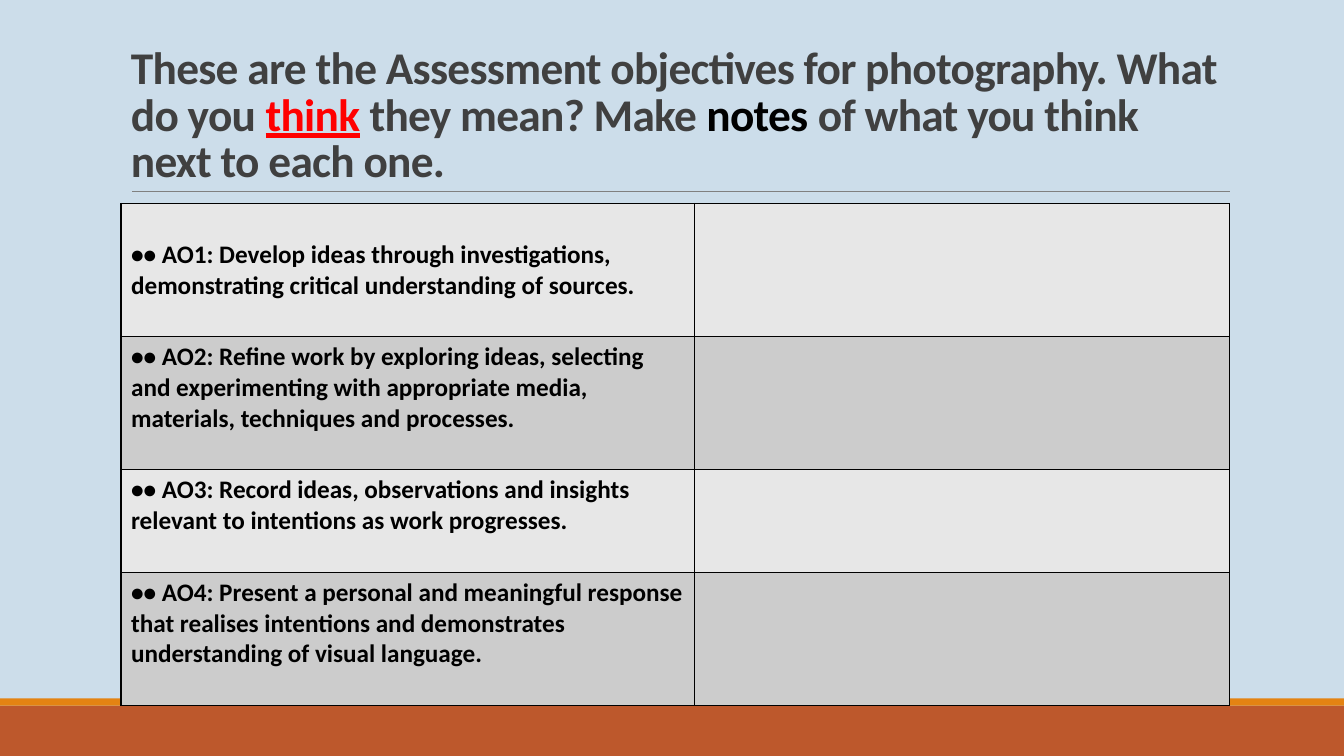
from lxml import etree
from pptx import Presentation
from pptx import util as u
from pptx.dml.color import RGBColor
from pptx.enum import shapes, text
from pptx.oxml.ns import qn

FONT = "Calibri"
SLIDE_W, SLIDE_H = u.Cm(33.87), u.Cm(19.05)
QUESTION = [
    ("These are the Assessment objectives for photography. What do you ", "404040", False),
    ("think", "FF0000", True),
    (" they mean? Make", "404040", False),
    (" notes ", "000000", False),
    ("of what you think next to each one.", "404040", False),
]
OBJECTIVES = [
    ("•• AO1: Develop ideas through investigations, demonstrating critical "
     "understanding of sources.", 3.35),
    ("•• AO2: Refine work by exploring ideas, selecting and experimenting with "
     "appropriate media, materials, techniques and processes.", 3.35),
    ("•• AO3: Record ideas, observations and insights relevant to intentions "
     "as work progresses.", 2.59),
    ("•• AO4: Present a personal and meaningful response that realises intentions "
     "and demonstrates understanding of visual language.", 3.35),
]
ROW_FILLS = ["E7E7E7", "CCCCCC"]


def color(hex_string):
    """Return the colour for a hex string."""
    return RGBColor.from_string(hex_string)


def style_run(run, size, hex_string, underline=False):
    """Give a run its bold type, size and colour."""
    run.font.name = FONT
    run.font.size = u.Pt(size)
    run.font.bold = True
    run.font.underline = underline
    run.font.color.rgb = color(hex_string)


def add_band(slide, left, top, width, height, fill):
    """Draw one plain coloured band."""
    band = slide.shapes.add_shape(shapes.MSO_SHAPE.RECTANGLE, left, top, width, height)
    band.shadow.inherit = False
    band.fill.solid()
    band.fill.fore_color.rgb = color(fill)
    band.line.fill.background()


def add_footer(slide, left, top, width, height):
    """Draw the footer with its thin accent along the top."""
    accent = u.Cm(0.18)
    add_band(slide, left, top + accent, width, height - accent, "BD582C")
    add_band(slide, left, top, width, accent, "E48312")


def add_question(slide, left, top, width, height):
    """Write the question with a rule along its lower edge."""
    rule_left, rule_y = left + u.Cm(0.28), top + height
    rule = slide.shapes.add_connector(
        shapes.MSO_CONNECTOR.STRAIGHT, rule_left, rule_y, left + width, rule_y)
    rule.line.color.rgb = color("808080")
    rule.line.width = u.Pt(0.5)
    etree.SubElement(rule._element.spPr, qn("a:effectLst"))

    frame = slide.shapes.add_textbox(left, top, width, height).text_frame
    frame.word_wrap = True
    frame.vertical_anchor = text.MSO_ANCHOR.BOTTOM
    question = frame.paragraphs[0]
    question.line_spacing = 0.85
    for words, hex_string, underline in QUESTION:
        run = question.add_run()
        run.text = words
        style_run(run, 32.4, hex_string, underline)
        run._r.get_or_add_rPr().set("spc", "-50")


def border_cell(cell):
    """Draw a thin black border on every side of a cell."""
    properties = cell._tc.get_or_add_tcPr()
    for position, side in enumerate(("a:lnL", "a:lnR", "a:lnT", "a:lnB")):
        border = etree.Element(qn(side), w=str(u.Pt(1)))
        fill = etree.SubElement(border, qn("a:solidFill"))
        etree.SubElement(fill, qn("a:srgbClr"), val="000000")
        properties.insert(position, border)


def add_objectives(slide, left, top, width, height):
    """Lay out the objectives beside empty cells for notes."""
    grid = slide.shapes.add_table(len(OBJECTIVES), 2, left, top, width, height).table
    grid.columns[0].width = u.Cm(14.45)
    grid.columns[1].width = width - u.Cm(14.45)
    for index, (objective, row_height) in enumerate(OBJECTIVES):
        grid.rows[index].height = u.Cm(row_height)
        for cell in grid.rows[index].cells:
            cell.fill.solid()
            cell.fill.fore_color.rgb = color(ROW_FILLS[index % 2])
            border_cell(cell)
        objective_cell = grid.cell(index, 0)
        objective_cell.text_frame.text = objective
        style_run(objective_cell.text_frame.paragraphs[0].runs[0], 18, "000000")
    grid.cell(0, 0).vertical_anchor = text.MSO_ANCHOR.MIDDLE


def main():
    """Build the assessment objectives slide."""
    deck = Presentation()
    deck.slide_width, deck.slide_height = SLIDE_W, SLIDE_H
    slide = deck.slides.add_slide(deck.slide_layouts[6])
    slide.background.fill.solid()
    slide.background.fill.fore_color.rgb = color("CCDDEA")
    left, width = u.Cm(3.05), u.Cm(27.94)
    add_footer(slide, 0, u.Cm(17.6), SLIDE_W, SLIDE_H - u.Cm(17.6))
    add_question(slide, left, u.Cm(0.79), width, u.Cm(4.04))
    add_objectives(slide, left, u.Cm(5.13), width, u.Cm(12.64))
    deck.save("out.pptx")


if __name__ == "__main__":
    main()
